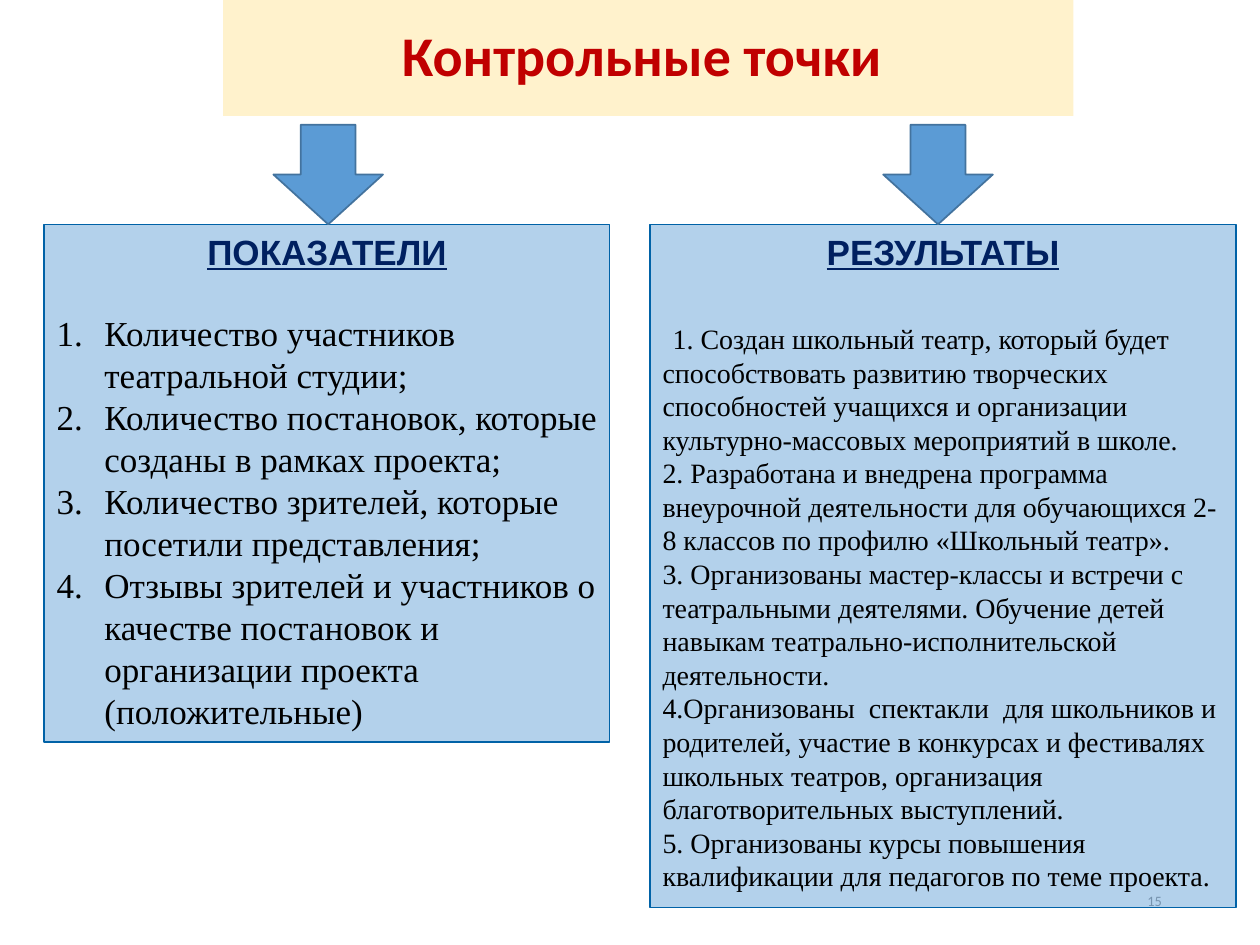
from dataclasses import dataclass

from pptx import Presentation
from pptx.dml.color import RGBColor
from pptx.enum.shapes import MSO_SHAPE
from pptx.enum.text import MSO_ANCHOR, MSO_AUTO_SIZE, PP_ALIGN
from pptx.oxml.ns import qn
from pptx.util import Inches, Pt

RECTANGLE, DOWN_ARROW = MSO_SHAPE.RECTANGLE, MSO_SHAPE.DOWN_ARROW
TOP, MIDDLE = MSO_ANCHOR.TOP, MSO_ANCHOR.MIDDLE
LEFT, CENTER, RIGHT = PP_ALIGN.LEFT, PP_ALIGN.CENTER, PP_ALIGN.RIGHT
NO_FIT = MSO_AUTO_SIZE.NONE


@dataclass(frozen=True)
class Theme:
    banner: str = "FFF2CC"
    title: str = "C00000"
    blue: str = "5B9BD5"
    arrow_line: str = "43739E"
    panel_line: str = "0062A7"
    heading: str = "002060"
    body: str = "000000"
    number: str = "8C8C8C"
    title_font: str = "Calibri"
    heading_font: str = "Arial"
    body_font: str = "Times New Roman"
    title_size: float = 32
    heading_size: float = 20
    indicator_size: float = 20
    result_size: float = 16
    number_size: float = 8.2
    panel_opacity: int = 46


THEME = Theme()

INDICATORS = [
    "Количество участников театральной студии;",
    "Количество постановок, которые созданы в рамках проекта;",
    "Количество зрителей, которые посетили представления;",
    "Отзывы зрителей и участников о качестве постановок и организации проекта (положительные)",
]
RESULTS = [
    "1. Создан школьный театр, который будет способствовать развитию творческих способностей "
    "учащихся и организации культурно-массовых мероприятий в школе.",
    "2. Разработана и внедрена программа внеурочной деятельности для обучающихся 2-8 классов "
    "по профилю «Школьный театр».",
    "3. Организованы мастер-классы и встречи с театральными деятелями. Обучение детей навыкам "
    "театрально-исполнительской деятельности.",
    "4.Организованы  спектакли  для школьников и родителей, участие в конкурсах и фестивалях "
    "школьных театров, организация благотворительных выступлений.",
    "5. Организованы курсы повышения квалификации для педагогов по теме проекта.",
]


def inches(box):
    return [Inches(length) for length in box]


def format_para(para, font, size, color, align=LEFT, bold=False, underline=False):
    para.alignment = align
    for span in para.runs:
        span.font.name = font
        span.font.size = Pt(size)
        span.font.color.rgb = RGBColor.from_string(color)
        span.font.bold = bold
        span.font.underline = underline


def paint(shape, fill, line, width):
    shape.shadow.inherit = False
    shape.fill.solid()
    shape.fill.fore_color.rgb = RGBColor.from_string(fill)
    shape.line.color.rgb = RGBColor.from_string(line)
    shape.line.width = Pt(width)


def set_opacity(shape, percent):
    color = shape.fill._xPr.find(qn("a:solidFill"))[0]
    color.makeelement(qn("a:alpha"), {})
    alpha = color.makeelement(qn("a:alpha"), {"val": str(percent * 1000)})
    color.append(alpha)


def indent(para, margin, first):
    props = para._p.get_or_add_pPr()
    props.set("marL", str(Inches(margin)))
    props.set("indent", str(Inches(first)))
    return props


def number_para(para):
    props = indent(para, 0.38, -0.38)
    for tag, attributes in (
        ("a:buFont", {"typeface": "+mj-lt"}),
        ("a:buAutoNum", {"type": "arabicPeriod"}),
    ):
        props.append(props.makeelement(qn(tag), attributes))


def add_title(page, box, text):
    title = page.shapes.title
    title.left, title.top, title.width, title.height = inches(box)
    title.fill.solid()
    title.fill.fore_color.rgb = RGBColor.from_string(THEME.banner)
    frame = title.text_frame
    frame.text = text
    frame.auto_size = NO_FIT
    frame.vertical_anchor = MIDDLE
    para = frame.paragraphs[0]
    para.line_spacing = 0.9
    format_para(para, THEME.title_font, THEME.title_size, THEME.title, CENTER, bold=True)


def add_page_number(page, box, text):
    frame = page.shapes.add_textbox(*inches(box)).text_frame
    frame.word_wrap = True
    frame.vertical_anchor = MIDDLE
    frame.text = text
    format_para(frame.paragraphs[0], THEME.title_font, THEME.number_size, THEME.number, RIGHT)


def add_panel(page, box, heading, items, size, gap):
    """Place a panel and return its body paragraphs."""
    panel = page.shapes.add_shape(RECTANGLE, *inches(box))
    paint(panel, THEME.blue, THEME.panel_line, 0.75)
    set_opacity(panel, THEME.panel_opacity)
    frame = panel.text_frame
    frame.word_wrap = True
    frame.vertical_anchor = TOP
    frame.text = "\n".join([heading, *items])
    first, *body = frame.paragraphs
    format_para(first, THEME.heading_font, THEME.heading_size, THEME.heading,
                CENTER, bold=True, underline=True)
    first.space_after = Pt(gap)
    for para in body:
        format_para(para, THEME.body_font, size, THEME.body)
    return body


def add_arrow(page, box):
    arrow = page.shapes.add_shape(DOWN_ARROW, *inches(box))
    paint(arrow, THEME.blue, THEME.arrow_line, 1)


def main():
    deck = Presentation()
    deck.slide_width, deck.slide_height = Inches(10), Inches(7.5)
    page = deck.slides.add_slide(deck.slide_layouts[5])

    # Banner and page number
    add_title(page, (1.77, 0, 6.75, 0.92), "Контрольные точки ")
    add_page_number(page, (7.07, 6.95, 2.25, 0.4), "15")

    # Indicators: a numbered list
    for para in add_panel(page, (0.35, 1.78, 4.49, 4.11), "ПОКАЗАТЕЛИ",
                          INDICATORS, THEME.indicator_size, gap=22):
        number_para(para)

    # Results: plain paragraphs, the first one slightly indented
    results = add_panel(page, (5.16, 1.78, 4.65, 5.42), "РЕЗУЛЬТАТЫ",
                        RESULTS, THEME.result_size, gap=28)
    indent(results[0], 0, 0.08)

    # Arrows from the banner to the panels
    for left in (2.17, 7.01):
        add_arrow(page, (left, 0.99, 0.87, 0.79))

    deck.save("out.pptx")


if __name__ == "__main__":
    main()
